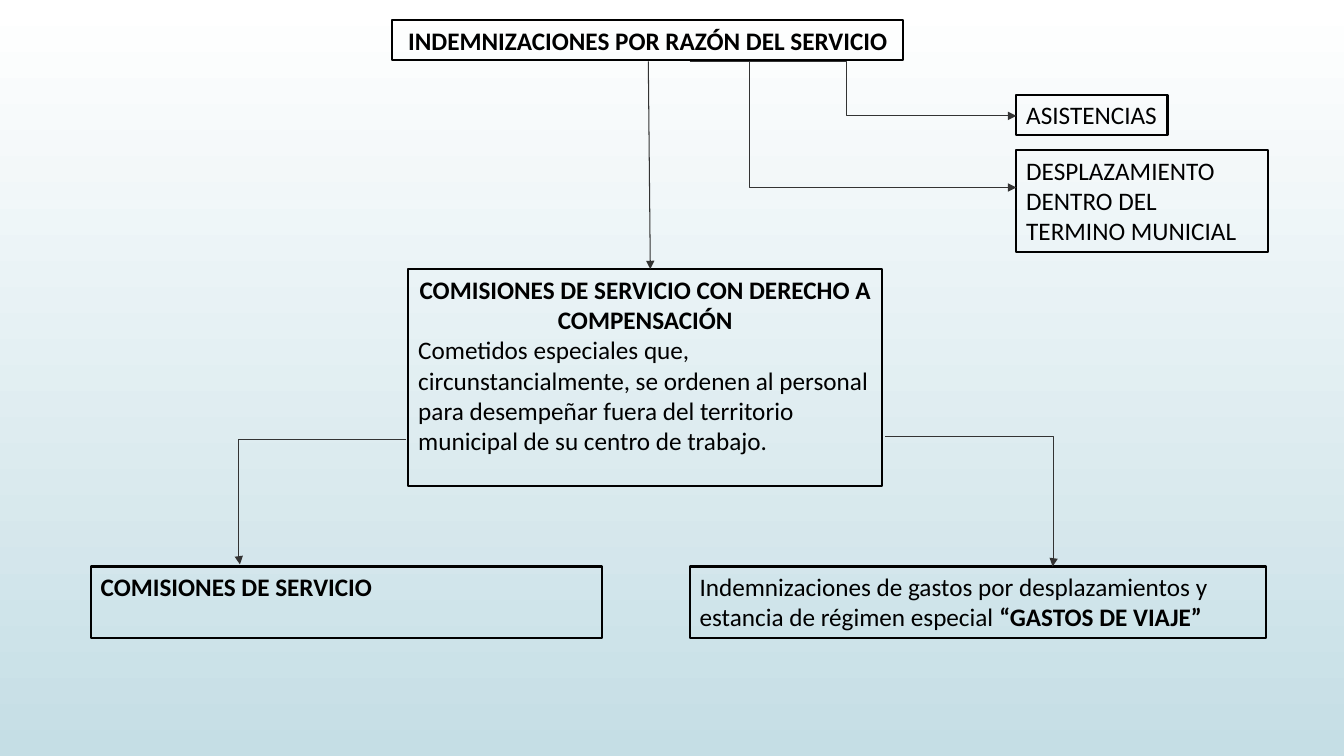
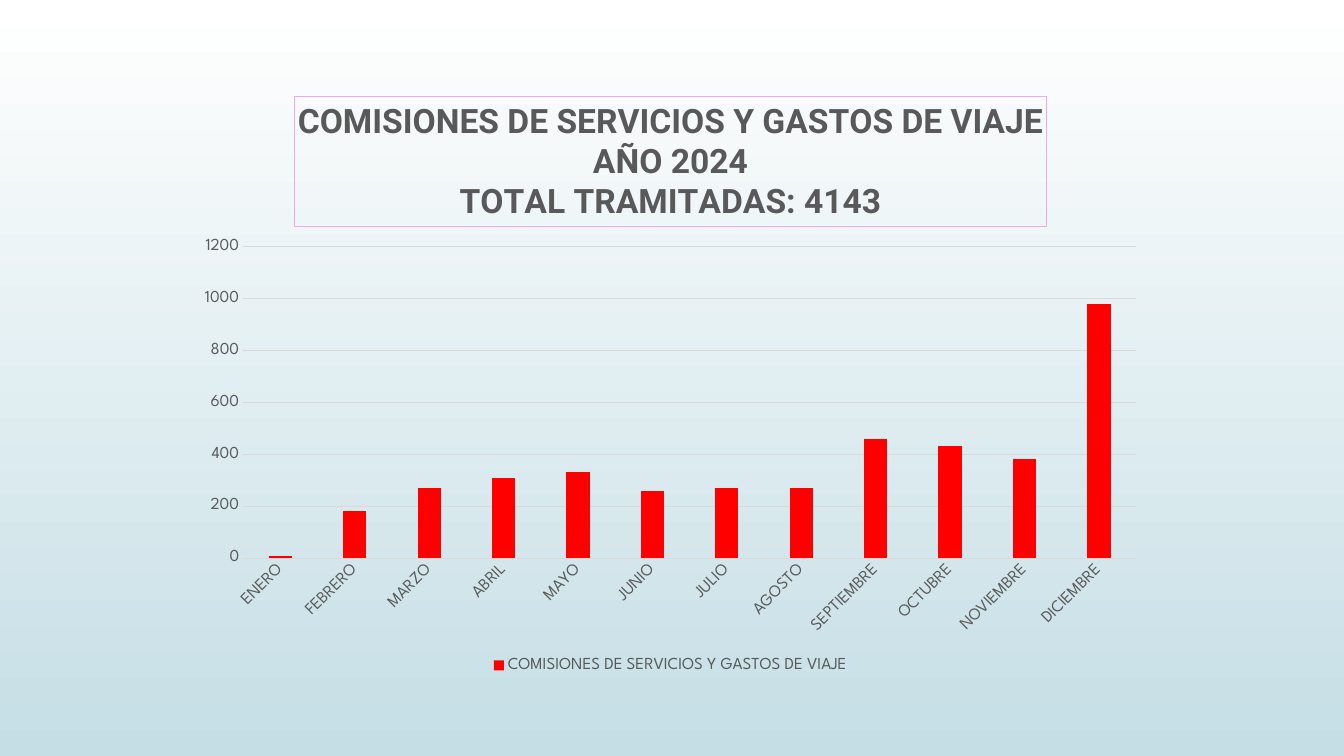
from dataclasses import dataclass

from lxml.etree import SubElement
from pptx import Presentation
from pptx.chart.data import CategoryChartData
from pptx.dml.color import RGBColor
from pptx.enum.chart import XL_CHART_TYPE, XL_LEGEND_POSITION, XL_TICK_MARK
from pptx.enum.shapes import MSO_CONNECTOR
from pptx.enum.text import MSO_ANCHOR, MSO_AUTO_SIZE, PP_ALIGN
from pptx.oxml.ns import qn
from pptx.util import Inches, Pt


@dataclass(frozen=True)
class Theme:
    sky_top: RGBColor = RGBColor(0xFF, 0xFF, 0xFF)
    sky_bottom: RGBColor = RGBColor(0xC5, 0xDE, 0xE5)
    ink: RGBColor = RGBColor(0, 0, 0)
    arrow: RGBColor = RGBColor(0x33, 0x33, 0x33)
    label: RGBColor = RGBColor(0x59, 0x59, 0x59)
    grid: RGBColor = RGBColor(0xD9, 0xD9, 0xD9)
    bar: RGBColor = RGBColor(0xFF, 0, 0)
    title_border: RGBColor = RGBColor(0xF4, 0xA6, 0xE6)
    body_font: str = "Calibri"
    chart_font: str = "League Spartan"
    chart_title_font: str = "Roboto"
    body_size: int = 18
    label_size: int = 12
    chart_title_size: int = 24
    box_line: float = 1.5
    thin_line: float = 0.75


T = Theme()
MONTHS = ("ENERO", "FEBRERO", "MARZO", "ABRIL", "MAYO", "JUNIO", "JULIO", "AGOSTO",
          "SEPTIEMBRE", "OCTUBRE", "NOVIEMBRE", "DICIEMBRE")
PROCESSED = (10, 180, 270, 310, 330, 260, 270, 270, 460, 430, 380, 980)


def set_background(master):
    fill = master.background.fill
    fill.gradient()
    fill.gradient_angle = 270
    for stop, color in zip(fill.gradient_stops, (T.sky_top, T.sky_bottom)):
        stop.color.rgb = color


def set_font(font, name, size, color, bold=False):
    font.name, font.size, font.bold = name, Pt(size), bold
    font.color.rgb = color


def set_line(line, color, width):
    line.color.rgb = color
    line.width = Pt(width)


def fill_box(shape, paragraphs):
    """Outline the box and write paragraphs given as (alignment, [(text, bold), ...])."""
    set_line(shape.line, T.ink, T.box_line)
    tf = shape.text_frame
    tf.word_wrap = True
    tf.auto_size = MSO_AUTO_SIZE.NONE
    tf.vertical_anchor = MSO_ANCHOR.TOP
    for i, (alignment, runs) in enumerate(paragraphs):
        p = tf.paragraphs[0] if i == 0 else tf.add_paragraph()
        p.alignment = alignment
        p.line_spacing = 1.0
        p.space_before = Pt(0)
        for text, bold in runs:
            r = p.add_run()
            r.text = text
            set_font(r.font, T.body_font, T.body_size, T.ink, bold)


def add_title(s, x, y, w, h, text):
    title = s.shapes.title
    title.left, title.top, title.width, title.height = map(Inches, (x, y, w, h))
    fill_box(title, [(PP_ALIGN.CENTER, [(text, True)])])


def add_box(s, x, y, w, h, *paragraphs):
    fill_box(s.shapes.add_textbox(*map(Inches, (x, y, w, h))), paragraphs)


def add_arrow(s, start, end, bend_x=None):
    """Draw an arrow; with bend_x it is an elbow whose vertical part lies at that x."""
    kind = MSO_CONNECTOR.STRAIGHT if bend_x is None else MSO_CONNECTOR.ELBOW
    arrow = s.shapes.add_connector(kind, *map(Inches, (*start, *end)))
    set_line(arrow.line, T.arrow, T.thin_line)
    sp_pr = arrow._element.spPr
    SubElement(sp_pr.find(qn("a:ln")), qn("a:tailEnd"), type="triangle")
    SubElement(sp_pr, qn("a:effectLst"))
    if bend_x is not None:
        ratio = (bend_x - start[0]) / (end[0] - start[0])
        adjustments = sp_pr.find(qn("a:prstGeom")).find(qn("a:avLst"))
        SubElement(adjustments, qn("a:gd"), name="adj1", fmla=f"val {round(ratio * 100000)}")


def style_axis(axis):
    axis.major_tick_mark = axis.minor_tick_mark = XL_TICK_MARK.NONE
    set_font(axis.tick_labels.font, T.chart_font, T.label_size, T.label)


def add_chart_title(chart, text):
    title = chart.chart_title
    title.include_in_layout = False
    title.text_frame.text = text
    for p in title.text_frame.paragraphs:
        for r in p.runs:
            set_font(r.font, T.chart_title_font, T.chart_title_size, T.label, True)
    set_line(title.format.line, T.title_border, T.thin_line)


def add_column_chart(s, x, y, w, h, title, name, categories, values):
    data = CategoryChartData()
    data.categories = categories
    data.add_series(name, values)
    chart = s.shapes.add_chart(XL_CHART_TYPE.COLUMN_CLUSTERED,
                               *map(Inches, (x, y, w, h)), data).chart
    set_font(chart.font, T.chart_font, 10, T.ink)
    add_chart_title(chart, title)

    chart.has_legend = True
    chart.legend.position = XL_LEGEND_POSITION.BOTTOM
    chart.legend.include_in_layout = False
    set_font(chart.legend.font, T.chart_font, T.label_size, T.label)

    months, counts = chart.category_axis, chart.value_axis
    style_axis(months)
    style_axis(counts)
    set_line(months.format.line, T.grid, T.thin_line)
    months._element.find(qn("c:txPr")).find(qn("a:bodyPr")).set("rot", "-2700000")
    counts.format.line.fill.background()
    set_line(counts.major_gridlines.format.line, T.grid, T.thin_line)

    plot = chart.plots[0]
    plot.vary_by_categories = False
    plot.gap_width, plot.overlap = 219, -27
    fill = plot.series[0].format.fill
    fill.solid()
    fill.fore_color.rgb = T.bar


def build_scheme(prs):
    s = prs.slides.add_slide(prs.slide_layouts.get_by_name("Title Only"))
    left = PP_ALIGN.LEFT
    add_title(s, 3.89, 0.2, 5.07, 0.4, "INDEMNIZACIONES POR RAZÓN DEL SERVICIO")
    add_box(s, 10.08, 0.94, 1.5, 0.4, (left, [("ASISTENCIAS", False)]))
    add_box(s, 10.08, 1.49, 2.5, 1.01,
            (left, [("DESPLAZAMIENTO DENTRO DEL TERMINO MUNICIAL", False)]))
    add_box(s, 4.05, 2.67, 4.7, 2.15,
            (PP_ALIGN.CENTER, [("COMISIONES DE SERVICIO CON DERECHO A COMPENSACIÓN", True)]),
            (left, [("Cometidos especiales que, circunstancialmente, se ordenen al personal "
                     "para desempeñar fuera del territorio municipal de su centro de trabajo.",
                     False)]))
    add_box(s, 0.9, 5.62, 5.07, 0.71, (left, [("COMISIONES DE SERVICIO", True)]))
    add_box(s, 6.84, 5.62, 5.72, 0.71,
            (left, [("Indemnizaciones de gastos por desplazamientos y estancia de régimen "
                     "especial ", False), ("“GASTOS DE VIAJE”", True)]))
    add_arrow(s, (7.33, 0.61), (10.08, 1.15), bend_x=8.4)
    add_arrow(s, (6.84, 0.61), (10.08, 1.86), bend_x=7.43)
    add_arrow(s, (6.43, 0.61), (6.45, 2.67))
    add_arrow(s, (8.78, 4.33), (10.44, 5.62), bend_x=10.45)
    add_arrow(s, (4.03, 4.36), (2.38, 5.6), bend_x=2.37)


def build_monthly_chart(prs):
    s = prs.slides.add_slide(prs.slide_layouts.get_by_name("Blank"))
    name = "COMISIONES DE SERVICIOS Y GASTOS DE VIAJE"
    add_column_chart(s, 1.84, 0.79, 9.62, 5.93,
                     f"{name}\nAÑO 2024\nTOTAL TRAMITADAS: 4143", name, MONTHS, PROCESSED)


def main():
    prs = Presentation()
    prs.slide_width, prs.slide_height = Inches(13.33), Inches(7.5)
    set_background(prs.slide_master)
    build_scheme(prs)
    build_monthly_chart(prs)
    prs.save("out.pptx")


if __name__ == "__main__":
    main()
